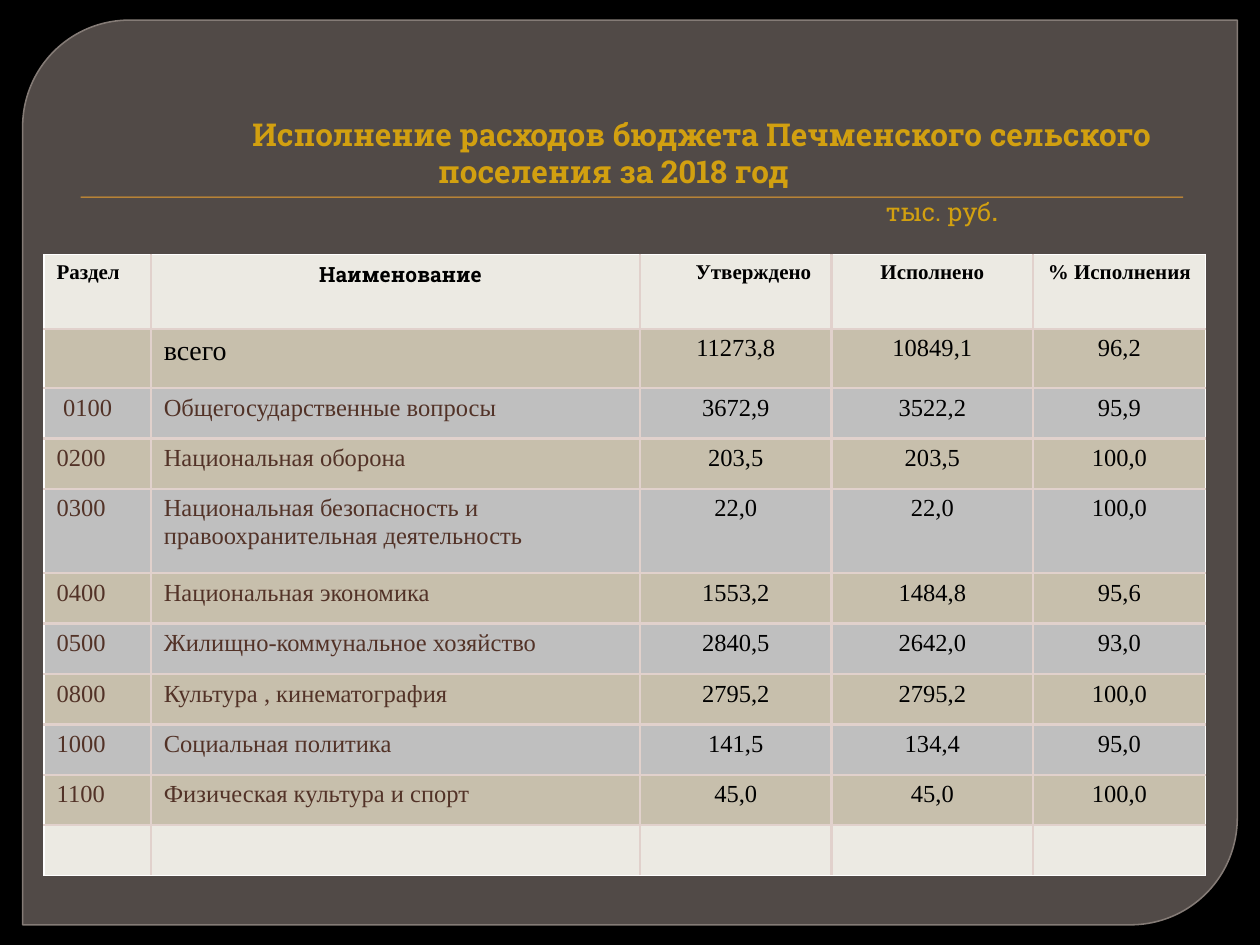
import pptx
import pptx.util
from lxml import etree
from pptx.dml.color import RGBColor
from pptx.enum.shapes import MSO_SHAPE
from pptx.enum.text import MSO_ANCHOR, MSO_AUTO_SIZE, PP_ALIGN
from pptx.oxml.ns import qn
from pptx.util import Inches, Pt

BLACK = RGBColor(0x00, 0x00, 0x00)
PANEL = RGBColor(0x51, 0x4A, 0x47)
EDGE = RGBColor(0x84, 0x7B, 0x76)
ORANGE = RGBColor(0xF0, 0xA2, 0x2E)
GOLD = RGBColor(0xD2, 0xA0, 0x10)
BROWN = RGBColor(0x52, 0x32, 0x27)
PALE = RGBColor(0xEC, 0xEA, 0xE3)
TAN = RGBColor(0xC7, 0xBF, 0xAC)
GREY = RGBColor(0xBF, 0xBF, 0xBF)
BORDER = RGBColor(0xE1, 0xD1, 0xCC)
SERIF, SLAB = "Times New Roman", "Roboto Slab"

# Content
TITLE = "Исполнение расходов бюджета Печменского сельского поселения за 2018 год"
UNIT = "тыс. руб"
ROWS = [
    ("Раздел", "Наименование", "Утверждено", "Исполнено", "% Исполнения"),
    ("", "всего", "11273,8", "10849,1", "96,2"),
    ("0100", "Общегосударственные вопросы", "3672,9", "3522,2", "95,9"),
    ("0200", "Национальная оборона", "203,5", "203,5", "100,0"),
    ("0300", "Национальная безопасность и правоохранительная деятельность",
     "22,0", "22,0", "100,0"),
    ("0400", "Национальная экономика", "1553,2", "1484,8", "95,6"),
    ("0500", "Жилищно-коммунальное хозяйство", "2840,5", "2642,0", "93,0"),
    ("0800", "Культура , кинематография", "2795,2", "2795,2", "100,0"),
    ("1000", "Социальная политика", "141,5", "134,4", "95,0"),
    ("1100", "Физическая культура и спорт", "45,0", "45,0", "100,0"),
    ("", "", "", "", ""),
]
COL_WIDTHS = [0.85, 3.88, 1.52, 1.6, 1.37]
ROW_HEIGHTS = {0: 0.59, 1: 0.47, 4: 0.67}  # all others 0.4
INDENTS = {(0, 1): 0.08, (0, 2): 0.28, (2, 0): 0.05}
LAST_ROW, LAST_COL = len(ROWS) - 1, len(COL_WIDTHS) - 1


def add_panel_shape(s, kind, box, color):
    sp = s.shapes.add_shape(kind, *map(Inches, box))
    sp.shadow.inherit = False
    sp.fill.solid()
    sp.fill.fore_color.rgb = color
    sp.line.fill.background()
    return sp


def set_indent(p, left, first=0):
    pPr = p._p.get_or_add_pPr()
    pPr.set("marL", str(Inches(left)))
    pPr.set("indent", str(Inches(first)))


def set_font(font, name, size, color, bold):
    font.name, font.size, font.bold = name, Pt(size), bold
    font.color.rgb = color


def set_borders(cell, sides):
    tcPr = cell._tc.get_or_add_tcPr()
    for side in sides:
        ln = etree.SubElement(tcPr, qn("a:ln" + side), w=str(Pt(1.5)))
        fill = etree.SubElement(ln, qn("a:solidFill"))
        etree.SubElement(fill, qn("a:srgbClr"), val=str(BORDER))


def format_cell(cell, row, col):
    # Only the inner grid lines are drawn
    inner = {"L": col > 0, "R": col < LAST_COL, "T": row > 0, "B": row < LAST_ROW}
    set_borders(cell, [side for side, drawn in inner.items() if drawn])
    cell.fill.solid()
    if row in (0, LAST_ROW):
        cell.fill.fore_color.rgb = PALE
    else:
        cell.fill.fore_color.rgb = TAN if row % 2 else GREY

    header, total = row == 0, row == 1
    cell.text = ROWS[row][col]
    p = cell.text_frame.paragraphs[0]
    if col > 1 or (header and col == 1):
        p.alignment = PP_ALIGN.CENTER
    if (row, col) in INDENTS:
        set_indent(p, INDENTS[row, col])
    size = 12 if header else 16 if total and col == 1 else 14
    color = BROWN if row > 1 and col < 2 else BLACK
    set_font(p.font, SLAB if header and col == 1 else SERIF, size, color, header)


prs = pptx.Presentation()
prs.slide_width, prs.slide_height = Inches(10), Inches(7.5)
s = prs.slides.add_slide(prs.slide_layouts[5])
s.background.fill.solid()
s.background.fill.fore_color.rgb = BLACK

# Panel and rule under the title
panel = add_panel_shape(s, MSO_SHAPE.ROUND_2_DIAG_RECTANGLE,
                        (0.18, 0.16, 9.64, 7.18), PANEL)
panel.adjustments[0], panel.adjustments[1] = 0.118, 0
panel.line.color.rgb = EDGE
panel.line.width = Pt(0.87)
add_panel_shape(s, MSO_SHAPE.RECTANGLE, (0.64, 1.56, 8.75, 0.01), ORANGE)

# Title, with the unit on its own line
title = s.shapes.title
title.left, title.top, title.width, title.height = map(Inches, (0.35, 0.92, 8.98, 0.94))
s.shapes._spTree.append(title._element)
tf = title.text_frame
tf.word_wrap, tf.auto_size = True, MSO_AUTO_SIZE.NONE
tf.vertical_anchor = MSO_ANCHOR.BOTTOM
p = tf.paragraphs[0]
p.text = TITLE
p.alignment = PP_ALIGN.CENTER
set_indent(p, 0.06, 1.4)
set_font(p.font, SLAB, 18, GOLD, True)
p = tf.add_paragraph()
p.alignment = PP_ALIGN.LEFT
set_indent(p, 6.58)
for text, size, bold in ((UNIT, 14.4, False), (".", 18, False)):
    r = p.add_run()
    r.text = text
    set_font(r.font, SLAB, size, GOLD, bold)

# Budget table
heights = [ROW_HEIGHTS.get(i, 0.4) for i in range(len(ROWS))]
table = s.shapes.add_table(
    len(ROWS), len(COL_WIDTHS), Inches(0.35), Inches(2.02),
    Inches(sum(COL_WIDTHS)), Inches(sum(heights))).table
table.first_row = table.horz_banding = False
for column, width in zip(table.columns, COL_WIDTHS):
    column.width = Inches(width)
for i, height in enumerate(heights):
    table.rows[i].height = Inches(height)
    for j in range(len(COL_WIDTHS)):
        format_cell(table.cell(i, j), i, j)

prs.save("out.pptx")
